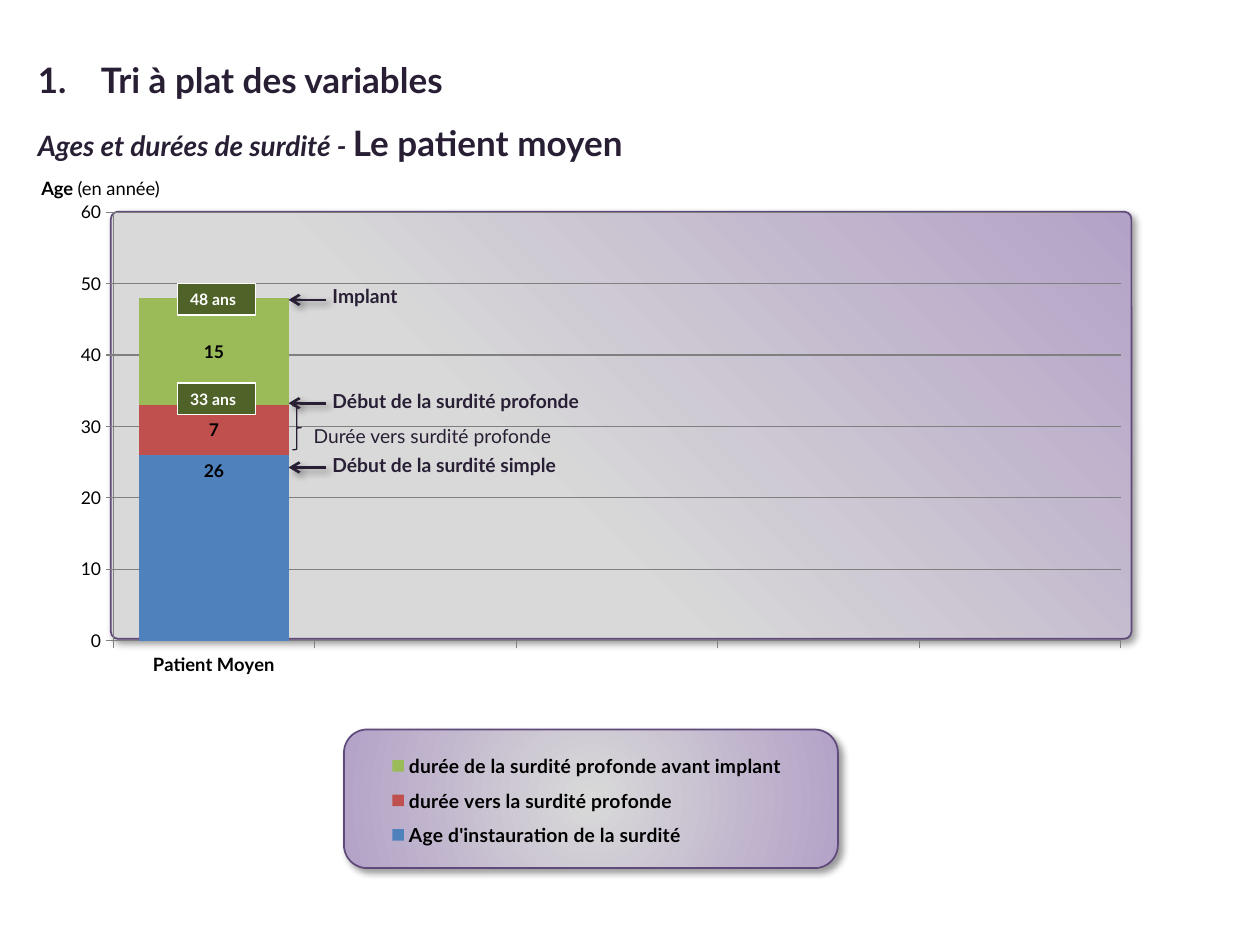
from pptx import Presentation, util as u
from pptx.chart.data import CategoryChartData
from pptx.dml.color import RGBColor
from pptx.enum import chart as ch, shapes, text
from pptx.oxml import parse_xml
from pptx.oxml.ns import nsdecls

PX = 9144  # 100 px to the inch
THEME = {
    "font": "Lato", "ink": "291F35", "black": "000000", "white": "FFFFFF",
    "grey": "808080", "violet": "604A7B", "badge": "4F6228",
    "panel": ("D9D9D9", "B3A2C7"),
    "title": 20, "subtitle": 16, "label": 11, "axis": 10, "unit": 10.5, "small": 9,
}
SHADOW = (f'<a:effectLst {nsdecls("a")}><a:outerShdw blurRad="50800" dist="38100" '
          'dir="2700000" algn="tl" rotWithShape="0"><a:srgbClr val="000000">'
          '<a:alpha val="40000"/></a:srgbClr></a:outerShdw></a:effectLst>')


def rgb(name):
    return RGBColor.from_string(THEME[name])


def style(font, size, color="ink", bold=False, italic=False):
    font.name, font.size = THEME["font"], u.Pt(THEME[size])
    font.bold, font.italic = bold, italic
    font.color.rgb = rgb(color)


prs = Presentation()
prs.slide_width, prs.slide_height = 1000 * PX, 750 * PX
s = prs.slides.add_slide(prs.slide_layouts[5])

# Title: numbered heading and subtitle
title = s.shapes.title
title.left, title.top, title.width, title.height = (v * PX for v in (20, 25, 752, 202))
tf = title.text_frame
tf.word_wrap, tf.auto_size = True, text.MSO_AUTO_SIZE.NONE
tf.vertical_anchor = text.MSO_ANCHOR.TOP
heading = [
    ('<a:buFont %s typeface="+mj-lt"/>', '<a:buAutoNum %s type="arabicPeriod"/>',
     [("Tri à plat des variables", "title", False)]),
    (None, '<a:buNone %s/>',
     [("Ages et durées de surdité - ", "subtitle", True), ("Le patient moyen", "title", False)]),
]
for i, (bullet_font, bullet, runs) in enumerate(heading):
    p = tf.add_paragraph() if i else tf.paragraphs[0]
    p.alignment, p.line_spacing = text.PP_ALIGN.LEFT, 1.5
    for words, size, italic in runs:
        r = p.add_run()
        r.text = words
        style(r.font, size, bold=True, italic=italic)
    pPr = p._p.get_or_add_pPr()
    pPr.set("marL", str(50 * PX))
    pPr.set("indent", str(-50 * PX))
    for xml in filter(None, (bullet_font, bullet)):
        pPr.append(parse_xml(xml % nsdecls("a")))

# Gradient panels behind the plot and the legend
panels = [
    ((88, 168, 810, 339), 0.017, 40, (0, 100, 100, 0)),
    ((273, 579, 392, 110), 0.167, 0, (50, 50, 50, 50)),
]
for box, corner, start, focus in panels:
    sp = s.shapes.add_shape(shapes.MSO_SHAPE.ROUNDED_RECTANGLE, *(v * PX for v in box))
    sp.adjustments[0] = corner
    sp.line.color.rgb, sp.line.width = rgb("violet"), u.Pt(1)
    stops = "".join(f'<a:gs pos="{pos * 1000}"><a:srgbClr val="{color}"/></a:gs>'
                    for pos, color in zip((start, 100), THEME["panel"]))
    rect = " ".join(f'{side}="{v * 1000}"' for side, v in zip("ltrb", focus))
    sp.element.spPr.insert(2, parse_xml(
        f'<a:gradFill {nsdecls("a")} rotWithShape="1"><a:gsLst>{stops}</a:gsLst>'
        f'<a:path path="circle"><a:fillToRect {rect}/></a:path></a:gradFill>'))
    sp.element.spPr.append(parse_xml(SHADOW))

# Stacked column chart
series = [
    ("Age d'instauration de la surdité", 26, "4F81BD", ch.XL_LABEL_POSITION.INSIDE_END),
    ("durée vers la surdité profonde", 7, "C0504D", ch.XL_LABEL_POSITION.CENTER),
    ("durée de la surdité profonde avant implant", 15, "9BBB59", ch.XL_LABEL_POSITION.CENTER),
]
data = CategoryChartData()
data.categories = ["Patient Moyen"] + [""] * 4
for name, years, _, _ in series:
    data.add_series(name, [years] + [None] * 4)
chart = s.shapes.add_chart(ch.XL_CHART_TYPE.COLUMN_STACKED,
                           *(v * PX for v in (46, 153, 913, 533)), data).chart
chart.has_title = False
chart.font.name, chart.font.size = "Calibri", u.Pt(18)
chart.font.color.rgb = rgb("black")
plot = chart.plots[0]
plot.gap_width, plot.overlap, plot.vary_by_categories = 34, 100, False
for ser, (_, _, color, position) in zip(plot.series, series):
    ser.format.fill.solid()
    ser.format.fill.fore_color.rgb = RGBColor.from_string(color)
    labels = ser.data_labels
    labels.show_value, labels.position = True, position
    style(labels.font, "axis", "black", bold=True)

for axis, size, bold in ((chart.category_axis, "unit", True), (chart.value_axis, "axis", False)):
    axis.major_tick_mark = ch.XL_TICK_MARK.OUTSIDE
    axis.format.line.color.rgb, axis.format.line.width = rgb("grey"), u.Pt(0.75)
    style(axis.tick_labels.font, size, "black", bold)
val = chart.value_axis
val.minimum_scale, val.maximum_scale, val.major_unit = 0, 60, 10
val.major_gridlines.format.line.color.rgb = rgb("grey")
val.major_gridlines.format.line.width = u.Pt(0.75)

chart.has_legend = True
chart.legend.position = ch.XL_LEGEND_POSITION.RIGHT
chart.legend.include_in_layout = False
style(chart.legend.font, "label", "black", bold=True)

# Fixed places of the plot area and the legend, as shares of the chart
places = [
    ("c:plotArea", 0, '<c:layoutTarget val="inner"/>', (0.048, 0.029, 0.876, 0.638)),
    ("c:legend", 1, "", (0.28, 0.82, 0.36, 0.17)),
]
for tag, index, target, share in places:
    part = chart.element.xpath(f".//{tag}")[0]
    for old in part.xpath("./c:layout"):
        part.remove(old)
    sizes = "".join(f'<c:{k} val="{v}"/>' for k, v in zip("xywh", share))
    part.insert(index, parse_xml(
        f'<c:layout {nsdecls("c")}><c:manualLayout>{target}<c:xMode val="edge"/>'
        f'<c:yMode val="edge"/>{sizes}</c:manualLayout></c:layout>'))

# Arrows to the levels of the column
for y in (238, 320, 371):
    arrow = s.shapes.add_connector(shapes.MSO_CONNECTOR.STRAIGHT,
                                   259 * PX, y * PX, 229 * PX, y * PX)
    arrow.line.color.rgb, arrow.line.width = rgb("ink"), u.Pt(1.5)
    arrow.line._get_or_add_ln().append(parse_xml(f'<a:tailEnd {nsdecls("a")} type="arrow"/>'))
    arrow.element.spPr.append(parse_xml(SHADOW))

# Brace over the middle segment
brace = s.shapes.add_shape(shapes.MSO_SHAPE.RIGHT_BRACE, *(v * PX for v in (232, 322, 7, 35)))
brace.shadow.inherit = False
brace.fill.background()
brace.line.color.rgb, brace.line.width = rgb("ink"), u.Pt(0.75)

# Labels: each run is (words, bold)
notes = [
    ((23, 136, 124, 28), "unit", "black", [("Age ", True), ("(en année)", False)]),
    ((254, 221, 82, 29), "label", "ink", [("Implant", True)]),
    ((254, 304, 242, 29), "label", "ink", [("Début de la surdité profonde", True)]),
    ((254, 355, 223, 29), "label", "ink", [("Début de la surdité simple", True)]),
    ((239, 332, 211, 29), "label", "ink", [("Durée vers surdité profonde", False)]),
]
for box, size, color, runs in notes:
    tf = s.shapes.add_textbox(*(v * PX for v in box)).text_frame
    tf.word_wrap, tf.auto_size = False, text.MSO_AUTO_SIZE.SHAPE_TO_FIT_TEXT
    for words, bold in runs:
        r = tf.paragraphs[0].add_run()
        r.text = words
        style(r.font, size, color, bold)

# Age badges on the column
for y, words in ((225, "48 ans"), (304, "33 ans")):
    sp = s.shapes.add_shape(shapes.MSO_SHAPE.RECTANGLE, *(v * PX for v in (141, y, 62, 25)))
    sp.shadow.inherit = False
    sp.fill.solid()
    sp.fill.fore_color.rgb = rgb("badge")
    sp.line.color.rgb, sp.line.width = rgb("white"), u.Pt(0.75)
    tf = sp.text_frame
    tf.text = words
    tf.word_wrap, tf.auto_size = False, text.MSO_AUTO_SIZE.SHAPE_TO_FIT_TEXT
    tf.paragraphs[0].alignment = text.PP_ALIGN.LEFT
    style(tf.paragraphs[0].runs[0].font, "small", "white", bold=True)

prs.save("out.pptx")
